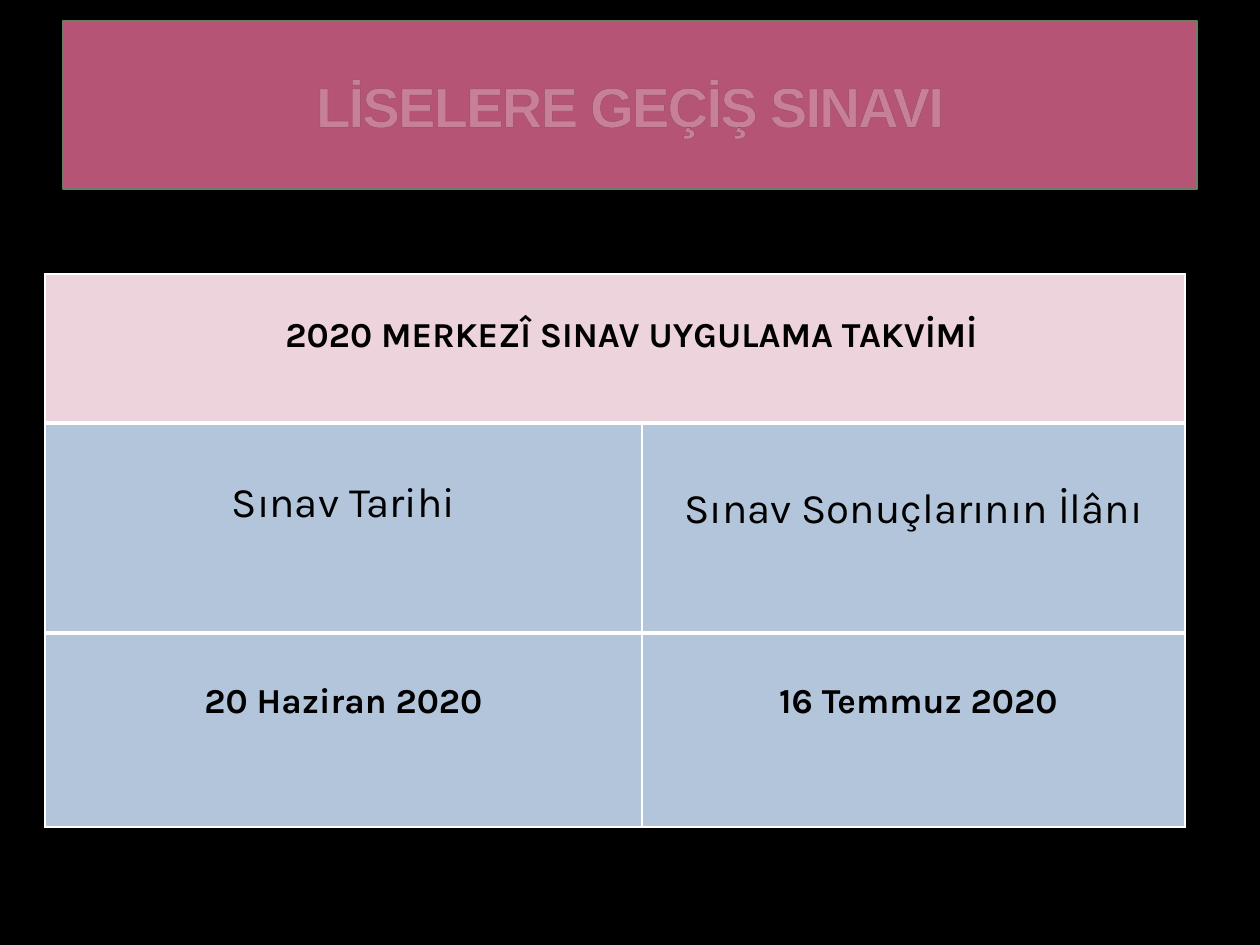
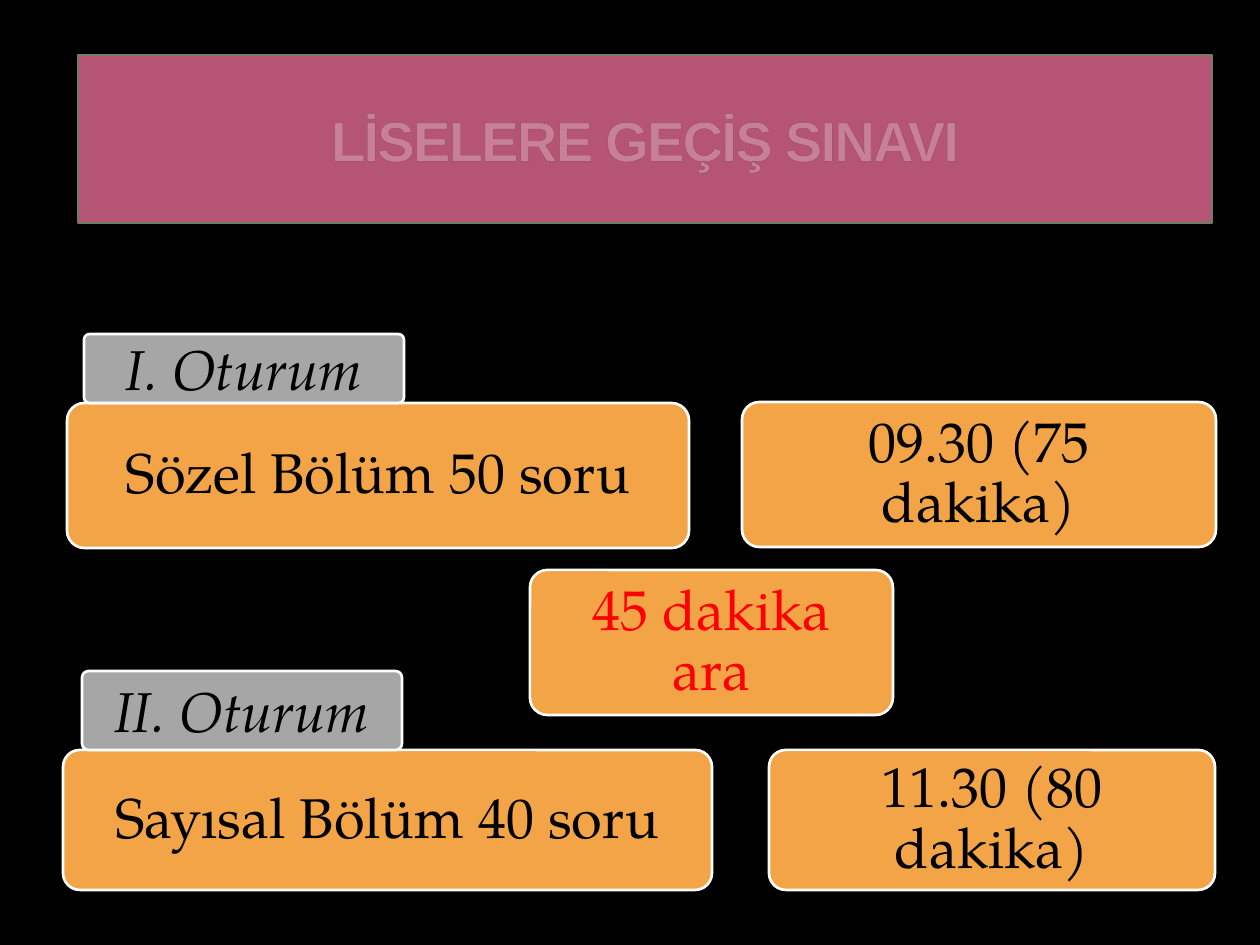
import pptx
import pptx.dml.color
import pptx.enum.shapes
import pptx.enum.text
import pptx.oxml
import pptx.oxml.ns
import pptx.util
import lxml.etree

RGB = pptx.dml.color.RGBColor
BLACK = RGB(0x00, 0x00, 0x00)
WHITE = RGB(0xFF, 0xFF, 0xFF)
RED = RGB(0xFF, 0x00, 0x00)
ROSE = RGB(0xB5, 0x54, 0x75)
OLIVE = RGB(0x3C, 0x44, 0x22)
MOSS = RGB(0x6F, 0x7D, 0x62)
PINK = RGB(0xEC, 0xD3, 0xDC)
BLUE = RGB(0xB3, 0xC5, 0xDA)
ORANGE = RGB(0xF3, 0xA4, 0x47)
GREY = RGB(0xA6, 0xA6, 0xA6)

SHAPES = pptx.enum.shapes.MSO_SHAPE
CENTER = pptx.enum.text.PP_ALIGN.CENTER
MIDDLE = pptx.enum.text.MSO_ANCHOR.MIDDLE
TOP = pptx.enum.text.MSO_ANCHOR.TOP

TITLE = "LİSELERE GEÇİŞ SINAVI"
TITLE_FONT = dict(name="Arial", size=pptx.util.Pt(32), bold=True)
SESSION_FONT = dict(name="TeX Gyre Pagella", size=pptx.util.Pt(32), bold=False)
HEADING_FONT = dict(name="Karla", size=pptx.util.Pt(24), bold=False)
STRONG_FONT = dict(name="Karla", size=pptx.util.Pt(20), bold=True)


def px(n):
    return pptx.util.Emu(round(n * 914400 / 126))


def set_all(target, values):
    for name, value in values.items():
        setattr(target, name, value)


def write(tf, text, font, color, spacing=1.0):
    p = tf.paragraphs[0]
    p.alignment = CENTER
    p.line_spacing = spacing
    r = p.add_run()
    r.text = text
    set_all(r.font, font)
    r.font.color.rgb = color
    return r


def insert_line(parent, index, tag, width, color):
    qn = pptx.oxml.ns.qn
    ln = lxml.etree.Element(qn(tag), w=str(pptx.util.Pt(width)))
    fill = lxml.etree.SubElement(ln, qn("a:solidFill"))
    parent.insert(index, ln)
    return lxml.etree.SubElement(fill, qn("a:srgbClr"), val=str(color))


def add_slide(prs):
    s = prs.slides.add_slide(prs.slide_layouts[6])
    fill = s.background.fill
    fill.solid()
    fill.fore_color.rgb = BLACK
    return s


def add_box(s, kind, box, fill, line, margin):
    sp = s.shapes.add_shape(kind, *map(px, box))
    sp.shadow.inherit = False
    sp.fill.solid()
    sp.fill.fore_color.rgb = fill
    sp.line.color.rgb = line
    sp.line.width = pptx.util.Pt(1.5)
    set_all(sp.text_frame, dict(
        word_wrap=True, vertical_anchor=MIDDLE,
        margin_left=px(margin), margin_right=px(margin),
        margin_top=0, margin_bottom=0))
    return sp


def add_title(s, x, y):
    sp = add_box(s, SHAPES.RECTANGLE, (x, y, 1134, 168), ROSE, MOSS, 12)
    r = write(sp.text_frame, TITLE, TITLE_FONT, WHITE)
    rPr = r.font._element
    rPr.set("spc", "-100")
    outline = insert_line(rPr, 0, "a:ln", 0.25, OLIVE)
    lxml.etree.SubElement(outline, pptx.oxml.ns.qn("a:alpha"), val="25000")


def add_card(s, text, box, color=BLACK):
    sp = add_box(s, SHAPES.ROUNDED_RECTANGLE, box, ORANGE, WHITE, 26)
    sp.adjustments[0] = 0.12
    write(sp.text_frame, text, SESSION_FONT, color, 0.9)


def add_tab(s, text, box):
    sp = add_box(s, SHAPES.ROUNDED_RECTANGLE, box, GREY, WHITE, 26)
    sp.adjustments[0] = 0.08
    r = write(sp.text_frame, text, SESSION_FONT, BLACK)
    r.font.italic = True


def set_borders(cell, widths):
    tcPr = cell._tc.get_or_add_tcPr()
    for i, (side, width) in enumerate(zip("LRTB", widths)):
        insert_line(tcPr, i, "a:ln" + side, width, WHITE)


def fill_cell(cell, text, font, fill, left, top):
    set_all(cell, dict(
        margin_left=px(left), margin_right=0, margin_top=px(top),
        margin_bottom=0, vertical_anchor=TOP))
    cell.fill.solid()
    cell.fill.fore_color.rgb = fill
    if text:
        write(cell.text_frame, text, font, BLACK)


def add_calendar(s, x, y, widths, heights, rows):
    frame = s.shapes.add_table(len(rows), len(widths), px(x), px(y),
                               px(sum(widths)), px(sum(heights)))
    table = frame.table
    set_all(table, dict(first_row=False, horz_banding=False))
    for column, width in zip(table.columns, widths):
        column.width = px(width)
    for row, height in zip(table.rows, heights):
        row.height = px(height)
    table.cell(0, 0).merge(table.cell(0, 1))
    for i, (font, fill, cells) in enumerate(rows):
        for j, (text, left, top) in enumerate(cells):
            cell = table.cell(i, j)
            fill_cell(cell, text, font, fill, left, top)
            set_borders(cell, (1, 1, 3 if i else 1, 3 if i < len(rows) - 1 else 1))


def build_calendar_slide(prs):
    s = add_slide(prs)
    add_title(s, 63, 21)
    add_calendar(s, 45, 274, (597, 543), (149, 210, 194), (
        (STRONG_FONT, PINK, (("2020 MERKEZÎ SINAV UYGULAMA TAKVİMİ", 33, 41),
                             ("", 0, 0))),
        (HEADING_FONT, BLUE, (("Sınav Tarihi", 0, 56),
                              ("Sınav Sonuçlarının İlânı", 0, 62))),
        (STRONG_FONT, BLUE, (("20 Haziran 2020", 0, 48),
                             ("16 Temmuz 2020", 10, 48)))))


def build_sessions_slide(prs):
    s = add_slide(prs)
    add_title(s, 78, 55)
    add_card(s, "11.30 (80 dakika)", (769, 750, 446, 140))
    add_card(s, "Sayısal Bölüm 40 soru", (63, 750, 649, 140))
    add_card(s, "Sözel Bölüm 50 soru", (67, 403, 622, 145))
    add_card(s, "09.30 (75 dakika)", (742, 402, 474, 145))
    add_card(s, "45 dakika ara", (530, 570, 363, 145), RED)
    add_tab(s, "I. Oturum", (84, 334, 320, 69))
    add_tab(s, "II. Oturum", (82, 671, 320, 79))


def main():
    prs = pptx.Presentation()
    set_all(prs, dict(slide_width=px(1260), slide_height=px(945)))
    build_calendar_slide(prs)
    build_sessions_slide(prs)
    prs.save("out.pptx")


if __name__ == "__main__":
    main()
